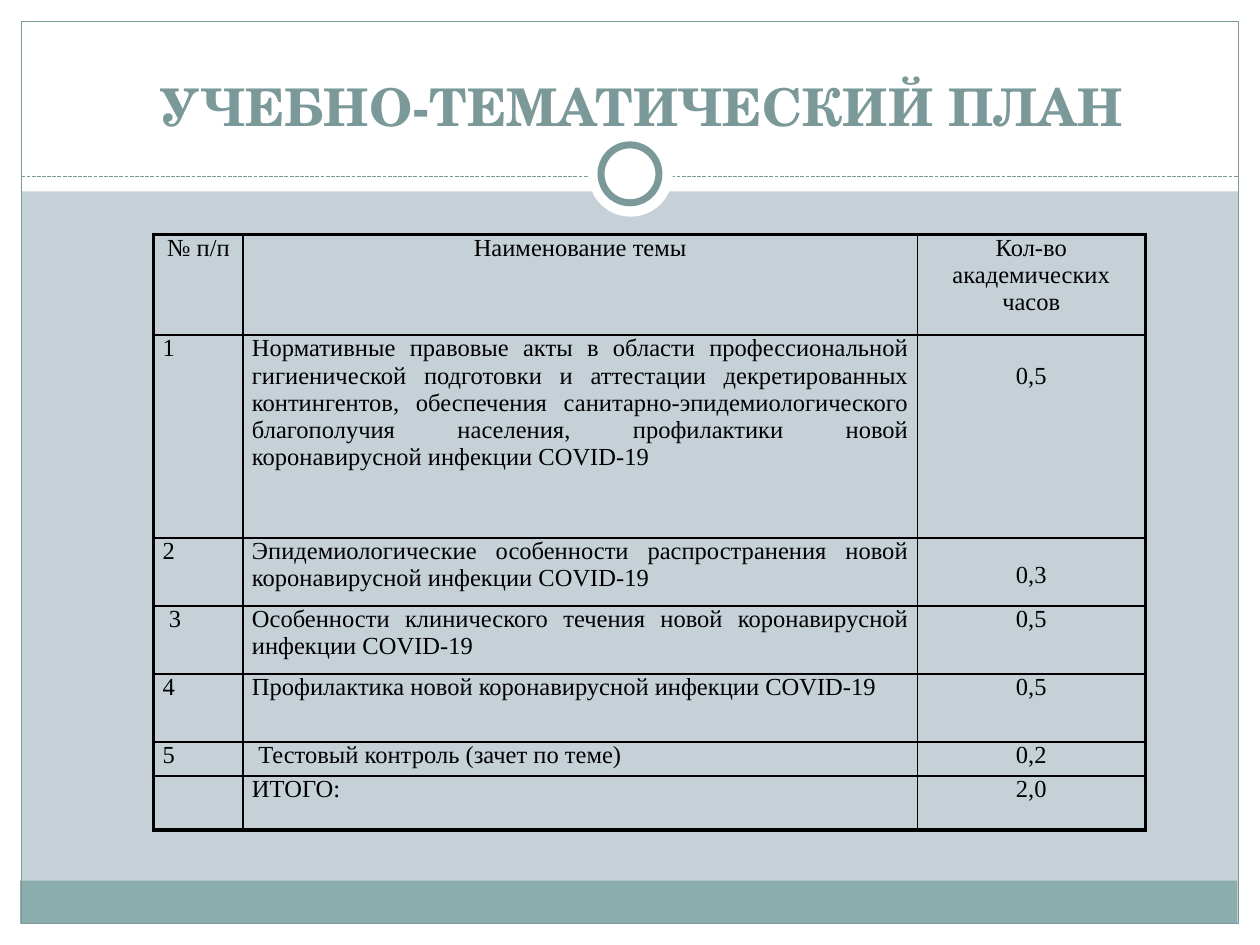
from lxml.etree import SubElement
from pptx import Presentation
from pptx.dml.color import RGBColor
from pptx.enum.dml import MSO_LINE
from pptx.enum.shapes import MSO_CONNECTOR, MSO_SHAPE
from pptx.enum.text import MSO_ANCHOR, MSO_AUTO_SIZE, PP_ALIGN
from pptx.oxml.ns import qn
from pptx.util import Inches, Pt

WHITE = RGBColor(0xFF, 0xFF, 0xFF)
BLACK = RGBColor(0, 0, 0)
PALE_BLUE = RGBColor(0xC5, 0xD1, 0xD7)
TEAL = RGBColor(0x8C, 0xAD, 0xAE)
GREY_TEAL = RGBColor(0x7C, 0x99, 0x9A)

LEFT, CENTER, JUSTIFY = PP_ALIGN.LEFT, PP_ALIGN.CENTER, PP_ALIGN.JUSTIFY
THIN, THICK = 1, 2.25

COLUMNS = [0.71, 5.35, 1.81]
HEADINGS = ["№ п/п", "Наименование темы", "Кол-во академических часов"]
# Row height, number, topic, hours, and format changes by column
TOPICS = [
    (1.61, "1", "Нормативные правовые акты в области профессиональной гигиенической "
     "подготовки и аттестации декретированных контингентов, обеспечения "
     "санитарно-эпидемиологического благополучия населения, профилактики новой "
     "коронавирусной инфекции COVID-19", "0,5", {2: {"top": 0.22}}),
    (0.54, "2", "Эпидемиологические особенности распространения новой коронавирусной "
     "инфекции COVID-19", "0,3", {2: {"top": 0.19}}),
    (0.54, "3", "Особенности клинического течения новой коронавирусной инфекции "
     "COVID-19", "0,5", {0: {"indent": 0.05}}),
    (0.54, "4", "Профилактика новой коронавирусной инфекции COVID-19", "0,5", {}),
    (0.27, "5", "Тестовый контроль (зачет по теме)", "0,2",
     {1: {"indent": 0.05, "align": LEFT}}),
    (0.43, "", "ИТОГО:", "2,0", {1: {"align": LEFT}}),
]


def apply(target, values):
    for name, value in values.items():
        setattr(target, name, value)


class SlideBuilder:
    title_font = {"name": "TeX Gyre Schola", "size": Pt(29.7), "bold": True}
    table_font = {"name": "Times New Roman", "size": Pt(14), "bold": False}

    def __init__(self, slide):
        self.slide = slide
        fill = slide.background.fill
        fill.solid()
        fill.fore_color.rgb = PALE_BLUE

    def shape(self, kind, box, fill=None, line=None, width=0.75):
        shape = self.slide.shapes.add_shape(kind, *map(Inches, box))
        shape.shadow.inherit = False
        if fill is None:
            shape.fill.background()
        else:
            shape.fill.solid()
            shape.fill.fore_color.rgb = fill
        if line is None:
            shape.line.fill.background()
        else:
            shape.line.color.rgb = line
            shape.line.width = Pt(width)

    def dashed_line(self, x1, y1, x2, y2):
        rule = self.slide.shapes.add_connector(
            MSO_CONNECTOR.STRAIGHT, *map(Inches, (x1, y1, x2, y2)))
        rule.line.color.rgb = GREY_TEAL
        apply(rule.line, {"width": Pt(0.75), "dash_style": MSO_LINE.SQUARE_DOT})
        SubElement(rule._element.spPr, qn("a:effectLst"))

    def title(self, text, box):
        title = self.slide.shapes.title
        self.slide.shapes._spTree.append(title._element)  # above the frame
        apply(title, dict(zip(("left", "top", "width", "height"), map(Inches, box))))
        frame = title.text_frame
        frame.text = text
        apply(frame, {"auto_size": MSO_AUTO_SIZE.NONE, "word_wrap": True,
                      "vertical_anchor": MSO_ANCHOR.BOTTOM,
                      "margin_top": 0, "margin_bottom": Inches(0.5)})
        paragraph = frame.paragraphs[0]
        paragraph.alignment = CENTER
        apply(paragraph.runs[0].font, self.title_font)
        paragraph.runs[0].font.color.rgb = GREY_TEAL

    def table(self, left, top, columns, heights):
        table = self.slide.shapes.add_table(
            len(heights), len(columns), Inches(left), Inches(top),
            Inches(sum(columns)), Inches(sum(heights))).table
        apply(table, {"first_row": False, "horz_banding": False})
        for column, width in zip(table.columns, columns):
            column.width = Inches(width)
        for row, height in zip(table.rows, heights):
            row.height = Inches(height)
        return table

    def cell(self, cell, text, borders, align=LEFT, top=0, indent=0):
        apply(cell, {"margin_left": Inches(0.07), "margin_right": Inches(0.07),
                     "margin_top": Inches(top), "margin_bottom": 0})
        properties = cell._tc.get_or_add_tcPr()
        for side, width in borders.items():
            line = SubElement(properties, qn(f"a:ln{side}"), w=str(Pt(width)))
            fill = SubElement(line, qn("a:solidFill"))
            SubElement(fill, qn("a:srgbClr"), val=str(BLACK))
        cell.fill.background()
        if not text:
            return
        cell.text = text
        paragraph = cell.text_frame.paragraphs[0]
        paragraph.alignment = align
        if indent:
            paragraph._p.get_or_add_pPr().set("marL", str(Inches(indent)))
        font = paragraph.runs[0].font
        apply(font, self.table_font)
        font.color.rgb = BLACK


def main():
    prs = Presentation()
    apply(prs, {"slide_width": Inches(10), "slide_height": Inches(7.5)})
    builder = SlideBuilder(prs.slides.add_slide(prs.slide_layouts[5]))

    # White margins, footer band and frame
    for box in [(0, 7.33, 10, 0.17), (0, 0, 10, 1.52),
                (0, 0, 0.17, 7.5), (9.83, 0, 0.17, 7.5)]:
        builder.shape(MSO_SHAPE.RECTANGLE, box, fill=WHITE)
    builder.shape(MSO_SHAPE.RECTANGLE, (0.16, 6.99, 9.66, 0.34), fill=TEAL)
    builder.shape(MSO_SHAPE.RECTANGLE, (0.17, 0.17, 9.66, 7.16), line=GREY_TEAL)

    # Divider with ring
    builder.dashed_line(0.17, 1.4, 9.83, 1.4)
    builder.shape(MSO_SHAPE.OVAL, (4.67, 1.05, 0.67, 0.67), fill=WHITE)
    builder.shape(MSO_SHAPE.OVAL, (4.77, 1.15, 0.46, 0.46), WHITE, GREY_TEAL, 4)

    builder.title("УЧЕБНО-ТЕМАТИЧЕСКИЙ ПЛАН", (0.43, 0.76, 9.33, 0.83))

    # Study plan: thick outer border, thin inner lines
    rows = [(0.8, *HEADINGS, {0: {"align": CENTER}, 1: {"align": CENTER}}), *TOPICS]
    plan = builder.table(1.22, 1.86, COLUMNS, [row[0] for row in rows])
    last_row, last_column = len(rows) - 1, len(COLUMNS) - 1
    for r, (_, *texts, changes) in enumerate(rows):
        for c, (text, align) in enumerate(zip(texts, (LEFT, JUSTIFY, CENTER))):
            outer = {"L": c == 0, "R": c == last_column,
                     "T": r == 0, "B": r == last_row}
            borders = {side: THICK if edge else THIN for side, edge in outer.items()}
            style = {"align": align, **changes.get(c, {})}
            builder.cell(plan.cell(r, c), text, borders, **style)

    prs.save("out.pptx")


if __name__ == "__main__":
    main()
